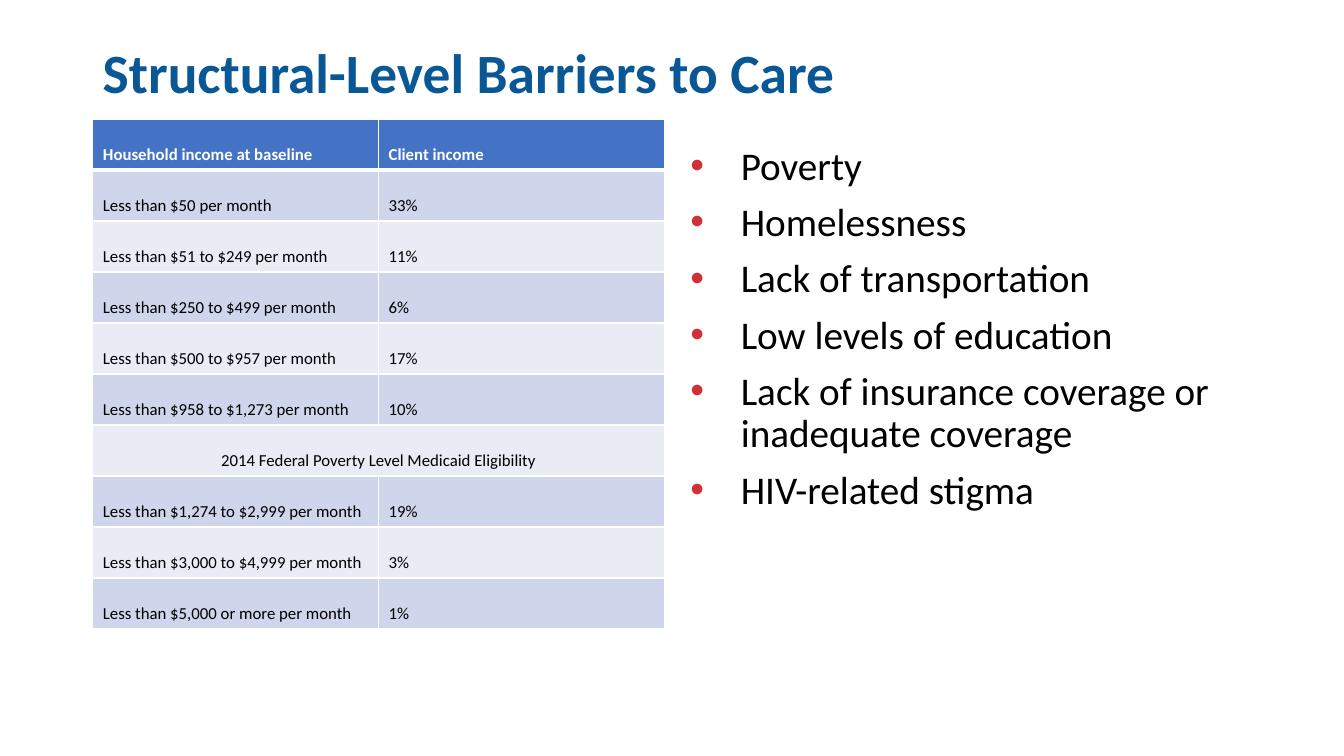
import pptx
import pptx.util
import pptx.dml.color
import pptx.enum.text
import pptx.oxml
import pptx.oxml.ns
import lxml.etree
from pptx.util import Cm

# Content
TITLE = "Structural-Level Barriers to Care"
INCOME_ROWS = [
    ("Household income at baseline", "Client income"),
    ("Less than $50 per month", "33%"),
    ("Less than $51 to $249 per month", "11%"),
    ("Less than $250 to $499 per month", "6%"),
    ("Less than $500 to $957 per month", "17%"),
    ("Less than $958 to $1,273 per month", "10%"),
    ("2014 Federal Poverty Level Medicaid Eligibility",),
    ("Less than $1,274 to $2,999 per month", "19%"),
    ("Less than $3,000 to $4,999 per month", "3%"),
    ("Less than $5,000 or more per month", "1%"),
]
BARRIERS = [
    "Poverty",
    "Homelessness",
    "Lack of transportation",
    "Low levels of education",
    "Lack of insurance coverage or inadequate coverage",
    "HIV-related stigma",
]
COLORS = {
    "title": "095895", "header": "4472C4", "odd": "CFD5EA", "even": "E9EBF5",
    "white": "FFFFFF", "text": "000000", "bullet": "D03138",
}
FONT = "Calibri"
LEFT = Cm(2.34)


def rgb(name):
    return pptx.dml.color.RGBColor.from_string(COLORS[name])


def style(paragraph, size, color, bold=False):
    font = paragraph.font
    font.name, font.size, font.bold = FONT, pptx.util.Pt(size), bold
    font.color.rgb = rgb(color)


def add_border(cell, side, width):
    tc_pr = cell._tc.get_or_add_tcPr()
    line = lxml.etree.SubElement(
        tc_pr, pptx.oxml.ns.qn("a:ln" + side), w=str(pptx.util.Pt(width)))
    fill = lxml.etree.SubElement(line, pptx.oxml.ns.qn("a:solidFill"))
    lxml.etree.SubElement(fill, pptx.oxml.ns.qn("a:srgbClr"), val=COLORS["white"])


def add_bullet(paragraph, indent):
    p_pr = paragraph._p.get_or_add_pPr()
    p_pr.set("marL", str(indent))
    p_pr.set("indent", str(-indent))
    color = lxml.etree.SubElement(p_pr, pptx.oxml.ns.qn("a:buClr"))
    lxml.etree.SubElement(color, pptx.oxml.ns.qn("a:srgbClr"), val=COLORS["bullet"])
    lxml.etree.SubElement(p_pr, pptx.oxml.ns.qn("a:buFont"), typeface="Arial")
    lxml.etree.SubElement(p_pr, pptx.oxml.ns.qn("a:buChar"), char="•")


def add_title(slide):
    title = slide.shapes.add_textbox(LEFT, Cm(0.75), Cm(29.2), Cm(2.31)).text_frame
    title.word_wrap = True
    title.vertical_anchor = pptx.enum.text.MSO_ANCHOR.MIDDLE
    title.text = TITLE
    title.paragraphs[0].line_spacing = 0.9
    style(title.paragraphs[0], 39.6, "title", True)


def add_income_table(slide):
    table = slide.shapes.add_table(
        len(INCOME_ROWS), 2, LEFT, Cm(3), Cm(14.4), Cm(12.85)).table
    for r, row in enumerate(INCOME_ROWS):
        header = r == 0
        band = "header" if header else "odd" if r % 2 else "even"
        for c in range(2):
            cell = table.cell(r, c)
            for side in "LRTB":
                thick = (r, side) in ((0, "B"), (1, "T"))
                add_border(cell, side, 3 if thick else 1)
            cell.fill.solid()
            cell.fill.fore_color.rgb = rgb(band)
            cell.vertical_anchor = pptx.enum.text.MSO_ANCHOR.BOTTOM
        for c, label in enumerate(row):
            cell = table.cell(r, c)
            cell.text = label
            style(cell.text_frame.paragraphs[0], 12,
                  "white" if header else "text", header)
        # A single label spans both columns
        if len(row) == 1:
            table.cell(r, 0).merge(table.cell(r, 1))
            table.cell(r, 0).text_frame.paragraphs[0].alignment = (
                pptx.enum.text.PP_ALIGN.CENTER)


def add_barriers(slide):
    barriers = slide.shapes.add_textbox(
        Cm(17.15), Cm(3.56), Cm(14.4), Cm(11.89)).text_frame
    barriers.word_wrap = True
    barriers.text = "\n".join(BARRIERS)
    for i, paragraph in enumerate(barriers.paragraphs):
        paragraph.line_spacing = 0.9
        paragraph.space_before = pptx.util.Pt(10 if i else 0)
        add_bullet(paragraph, Cm(1.27))
        style(paragraph, 28, "text")


def main():
    deck = pptx.Presentation()
    deck.slide_width, deck.slide_height = Cm(33.87), Cm(19.05)
    slide = deck.slides.add_slide(deck.slide_layouts[6])
    add_title(slide)
    add_income_table(slide)
    add_barriers(slide)
    deck.save("out.pptx")


if __name__ == "__main__":
    main()
